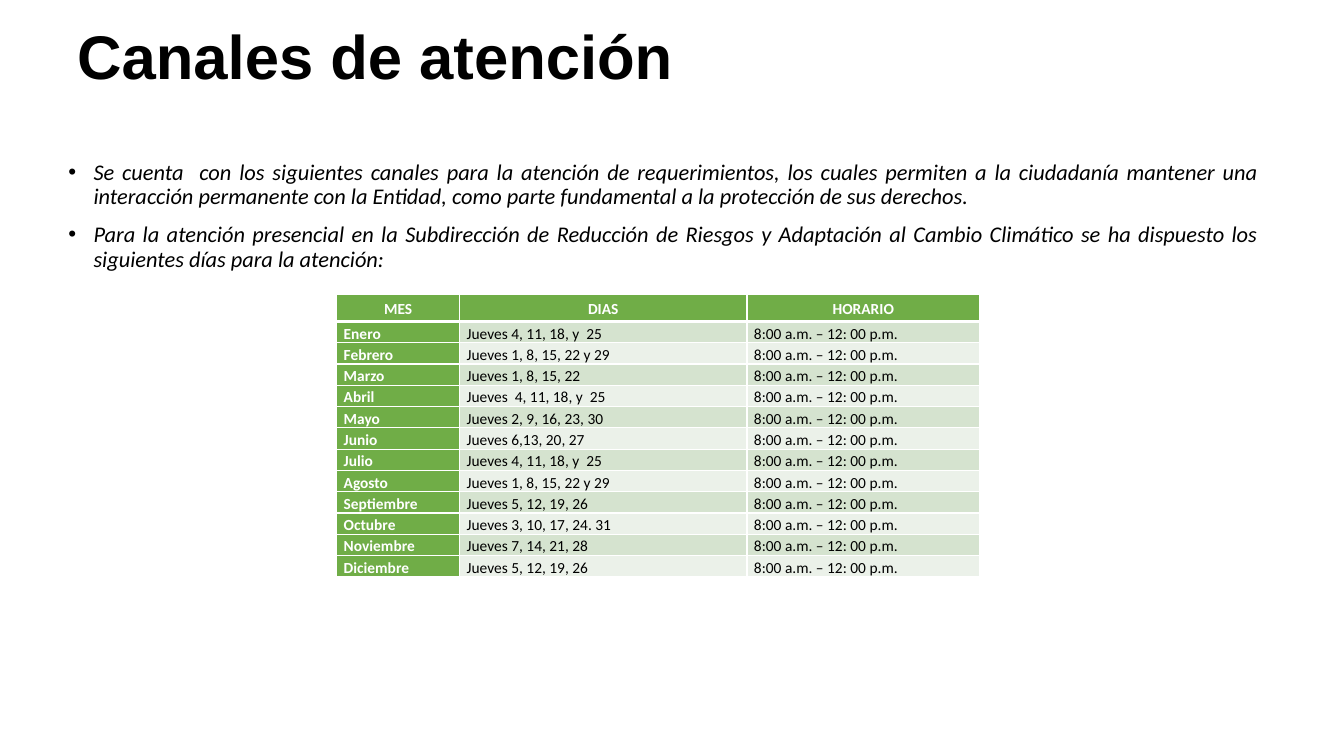
from lxml.etree import SubElement
from pptx import Presentation
from pptx.dml.color import RGBColor
from pptx.enum.text import MSO_ANCHOR, PP_ALIGN
from pptx.oxml import parse_xml
from pptx.oxml.ns import nsdecls, qn
from pptx.util import Inches, Pt

COLORS = {
    "text": "000000",
    "white": "FFFFFF",
    "green": "70AD47",
    "band_dark": "D5E3CF",
    "band_light": "EBF1E9",
}
SLIDE_WIDTH, SLIDE_HEIGHT = Inches(13.33), Inches(7.5)
COLUMN, ROW = SLIDE_WIDTH / 100, SLIDE_HEIGHT / 100
TITLE_BOX = (5, 1.73, 72.6, 12.4)
BODY_BOX = (4.35, 20.67, 90, 22)
TABLE_BOX = (25.05, 38.93, 47.85, 37.2)
COLUMN_SPANS = (9.15, 21.38, 17.32)
HEADER_SPAN, MONTH_SPAN = 3.6, 2.8

TITLE = "Canales de atención"
BULLETS = (
    "Se cuenta  con los siguientes canales para la atención de requerimientos, "
    "los cuales permiten a la ciudadanía mantener una interacción permanente con "
    "la Entidad, como parte fundamental a la protección de sus derechos.",
    "Para la atención presencial en la Subdirección de Reducción de Riesgos y "
    "Adaptación al Cambio Climático se ha dispuesto los siguientes días para la atención:",
)
HEADERS = ("MES", "DIAS", "HORARIO")
HOURS = "8:00 a.m. – 12: 00 p.m."
MONTHS = (
    ("Enero", "Jueves 4, 11, 18, y  25"),
    ("Febrero", "Jueves 1, 8, 15, 22 y 29"),
    ("Marzo", "Jueves 1, 8, 15, 22"),
    ("Abril", "Jueves  4, 11, 18, y  25"),
    ("Mayo", "Jueves 2, 9, 16, 23, 30"),
    ("Junio", "Jueves 6,13, 20, 27"),
    ("Julio", "Jueves 4, 11, 18, y  25"),
    ("Agosto", "Jueves 1, 8, 15, 22 y 29"),
    ("Septiembre", "Jueves 5, 12, 19, 26"),
    ("Octubre", "Jueves 3, 10, 17, 24. 31"),
    ("Noviembre", "Jueves 7, 14, 21, 28"),
    ("Diciembre", "Jueves 5, 12, 19, 26"),
)


def place(box):
    """Turn a box in grid columns and rows into slide lengths."""
    left, top, width, height = box
    return int(left * COLUMN), int(top * ROW), int(width * COLUMN), int(height * ROW)


def write(para, text, size=11, font="Calibri", color="text", bold=False,
          italic=False, align=PP_ALIGN.LEFT, spacing=0.9):
    """Write one formatted span of text into a paragraph."""
    para.alignment = align
    para.line_spacing = spacing
    span = para.add_run()
    span.text = text
    span.font.size = Pt(size)
    span.font.name = font
    span.font.bold = bold
    span.font.italic = italic
    span.font.color.rgb = RGBColor.from_string(COLORS[color])


def add_bullet(para):
    """Give a paragraph a hanging round bullet."""
    properties = para._p.get_or_add_pPr()
    properties.set("marL", str(Inches(0.25)))
    properties.set("indent", str(-Inches(0.25)))
    SubElement(properties, qn("a:buFont")).set("typeface", "Arial")
    SubElement(properties, qn("a:buChar")).set("char", "•")


def add_title(page, box):
    """Place the heading, centred vertically in its box."""
    frame = page.shapes.add_textbox(*place(box)).text_frame
    frame.word_wrap = True
    frame.vertical_anchor = MSO_ANCHOR.MIDDLE
    write(frame.paragraphs[0], TITLE, size=44, font="Arial", bold=True)


def add_body(page, box):
    """Place the justified bullet list."""
    frame = page.shapes.add_textbox(*place(box)).text_frame
    frame.word_wrap = True
    for index, text in enumerate(BULLETS):
        para = frame.add_paragraph() if index else frame.paragraphs[0]
        if index:
            para.space_before = Pt(10)
        add_bullet(para)
        write(para, text, size=16, italic=True, align=PP_ALIGN.JUSTIFY)


def add_borders(cell, top=1, bottom=1):
    """Draw white lines around a cell, with widths in points."""
    properties = cell._tc.get_or_add_tcPr()
    widths = {"lnL": 1, "lnR": 1, "lnT": top, "lnB": bottom}
    for position, (side, width) in enumerate(widths.items()):
        line = parse_xml(
            f'<a:{side} {nsdecls("a")} w="{Pt(width)}"><a:solidFill>'
            f'<a:srgbClr val="{COLORS["white"]}"/></a:solidFill></a:{side}>')
        properties.insert(position, line)


def fill_cell(cell, text, row, column):
    """Format one cell by its place in the schedule."""
    header, month = row == 0, column == 0
    band = "band_dark" if row % 2 else "band_light"
    strong = header or month
    cell.fill.solid()
    cell.fill.fore_color.rgb = RGBColor.from_string(COLORS["green" if strong else band])
    cell.margin_left = cell.margin_right = Inches(0.07)
    cell.margin_top = cell.margin_bottom = 0
    cell.vertical_anchor = MSO_ANCHOR.MIDDLE if header or column == 1 else MSO_ANCHOR.TOP
    write(cell.text_frame.paragraphs[0], text, bold=strong, spacing=1.15,
          color="white" if strong else "text",
          align=PP_ALIGN.CENTER if header else PP_ALIGN.LEFT if column == 2
          else PP_ALIGN.JUSTIFY)
    add_borders(cell, top=3 if row == 1 else 1, bottom=3 if header else 1)


def add_schedule(page, box):
    """Place the table of months, days and hours."""
    lines = [HEADERS] + [(month, days, HOURS) for month, days in MONTHS]
    table = page.shapes.add_table(len(lines), len(HEADERS), *place(box)).table
    table.first_col = True
    for column, span in zip(table.columns, COLUMN_SPANS):
        column.width = int(span * COLUMN)
    for row, texts in enumerate(lines):
        table.rows[row].height = int((MONTH_SPAN if row else HEADER_SPAN) * ROW)
        for column, text in enumerate(texts):
            fill_cell(table.cell(row, column), text, row, column)


def main():
    """Build and save the deck."""
    deck = Presentation()
    deck.slide_width, deck.slide_height = SLIDE_WIDTH, SLIDE_HEIGHT
    page = deck.slides.add_slide(deck.slide_layouts[6])
    add_title(page, TITLE_BOX)
    add_body(page, BODY_BOX)
    add_schedule(page, TABLE_BOX)
    deck.save("out.pptx")


if __name__ == "__main__":
    main()
